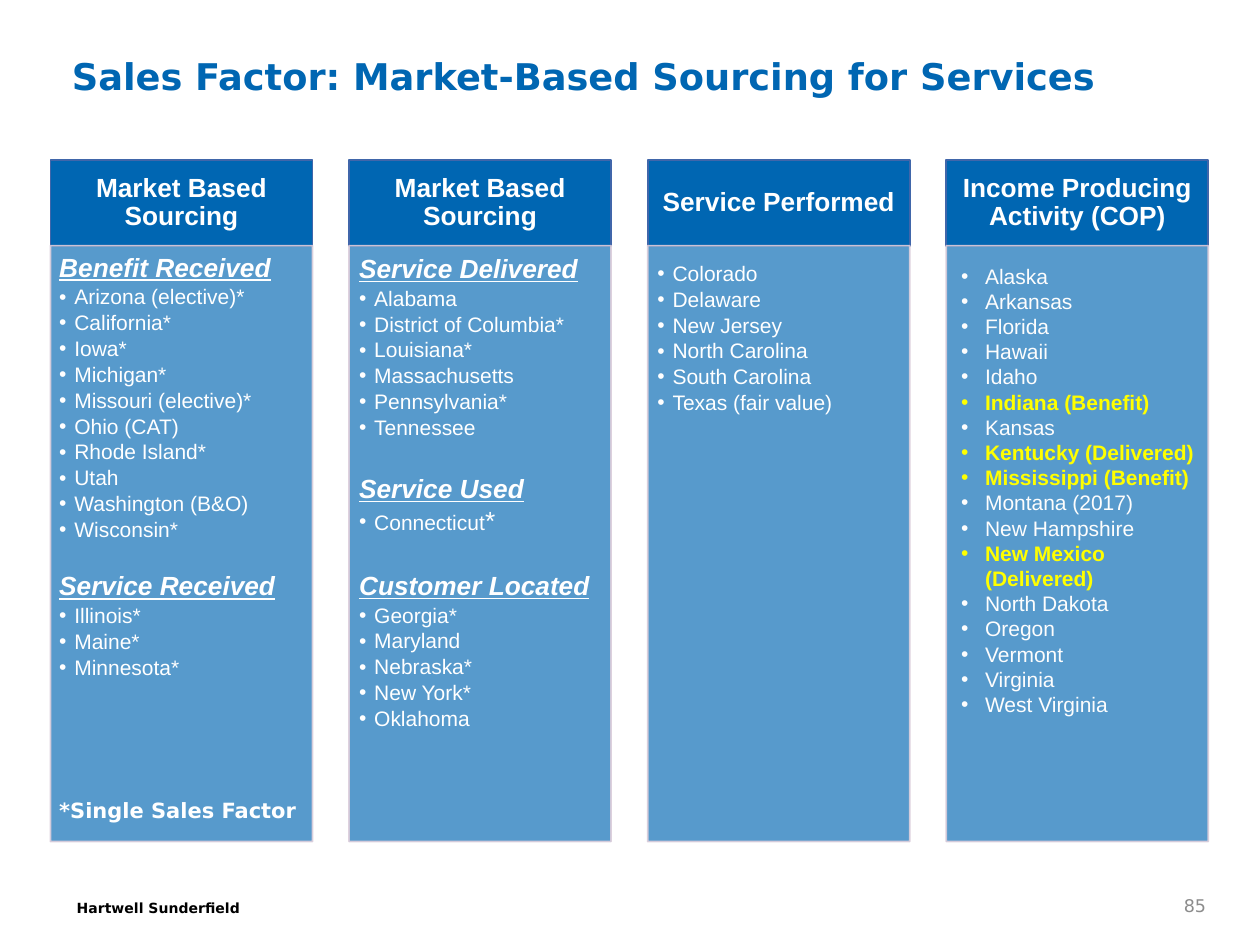
from lxml.etree import SubElement
from pptx import Presentation
from pptx.dml.color import RGBColor
from pptx.enum.shapes import MSO_SHAPE
from pptx.enum.text import MSO_ANCHOR, MSO_AUTO_SIZE, PP_ALIGN
from pptx.oxml.ns import qn
from pptx.util import Emu, Pt

TITLE = "Sales Factor: Market-Based Sourcing for Services"
HEADERS = ["Market Based Sourcing", "Market Based Sourcing",
           "Service Performed", "Income Producing Activity (COP)"]
BENEFIT_COLUMN = [
    ("Benefit Received", ["Arizona (elective)*", "California*", "Iowa*", "Michigan*",
                          "Missouri (elective)*", "Ohio (CAT)", "Rhode Island*", "Utah",
                          "Washington (B&O)", "Wisconsin*"]),
    ("Service Received", ["Illinois*", "Maine*", "Minnesota*"]),
]
DELIVERY_COLUMN = [
    ("Service Delivered", ["Alabama", "District of Columbia*", "Louisiana*",
                           "Massachusetts", "Pennsylvania*", "Tennessee"]),
    ("Service Used", ["Connecticut"]),
    ("Customer Located", ["Georgia*", "Maryland", "Nebraska*", "New York*", "Oklahoma"]),
]
PERFORMED_STATES = ["Colorado", "Delaware", "New Jersey", "North Carolina",
                    "South Carolina", "Texas (fair value)"]
ACTIVITY_STATES = ["Alaska", "Arkansas", "Florida", "Hawaii", "Idaho", "Indiana (Benefit)",
                   "Kansas", "Kentucky (Delivered)", "Mississippi (Benefit)",
                   "Montana (2017)", "New Hampshire", "New Mexico (Delivered)",
                   "North Dakota", "Oregon", "Vermont", "Virginia", "West Virginia"]
LARGE_SUFFIX = {"Connecticut": "*"}

PX = 9144
COLUMN_LEFT, COLUMN_PITCH, COLUMN_WIDTH = 40, 237, 208
HEADER_TOP, HEADER_HEIGHT, BODY_HEIGHT = 127, 68, 473
BODY_TOP = HEADER_TOP + HEADER_HEIGHT
BLUE, WHITE = "0066B2", "FFFFFF"


def px(*lengths):
    return [Emu(length * PX) for length in lengths]


def color(value):
    return RGBColor.from_string(value)


def set_font(font, size, value, name="Arial", bold=False):
    font.size, font.name, font.bold = Pt(size), name, bold
    font.color.rgb = color(value)


def set_frame(frame, insets, anchor=MSO_ANCHOR.TOP):
    frame.word_wrap = True
    frame.auto_size = MSO_AUTO_SIZE.NONE
    frame.vertical_anchor = anchor
    (frame.margin_left, frame.margin_top,
     frame.margin_right, frame.margin_bottom) = px(*insets)


def set_alpha(fill_format, percent):
    choice = fill_format.fore_color._xFill.find(qn("a:srgbClr"))
    SubElement(choice, qn("a:alpha"), val=str(percent * 1000))


def add_panel(slide, left, top, height, line_color, opacity=100, line_opacity=100):
    shape = slide.shapes.add_shape(MSO_SHAPE.RECTANGLE, *px(left, top, COLUMN_WIDTH, height))
    shape.shadow.inherit = False
    shape.fill.solid()
    shape.fill.fore_color.rgb = color(BLUE)
    shape.line.width = Pt(1)
    shape.line.color.rgb = color(line_color)
    if opacity < 100:
        set_alpha(shape.fill, opacity)
        set_alpha(shape.line.fill, line_opacity)
    return shape


def add_label(slide, box, text, size, value, bold=False, insets=(10, 5, 10, 5),
              anchor=MSO_ANCHOR.TOP, align=PP_ALIGN.LEFT):
    frame = slide.shapes.add_textbox(*px(*box)).text_frame
    set_frame(frame, insets, anchor)
    paragraph = frame.paragraphs[0]
    paragraph.text, paragraph.alignment = text, align
    set_font(paragraph.font, size, value, "DejaVu Sans", bold)


def next_paragraph(frame):
    first = frame.paragraphs[0]
    paragraph = frame.add_paragraph() if first.runs else first
    paragraph.alignment = PP_ALIGN.LEFT
    return paragraph


def add_bullet(frame, text, indent, value=WHITE, bold=False, spacing=None, after=0):
    paragraph = next_paragraph(frame)
    paragraph.add_run().text = text
    set_font(paragraph.font, 12, value, bold=bold)
    if text in LARGE_SUFFIX:
        suffix = paragraph.add_run()
        suffix.text, suffix.font.size = LARGE_SUFFIX[text], Pt(15)
    paragraph.line_spacing, paragraph.space_after = spacing, Pt(after)
    properties = paragraph._p.get_or_add_pPr()
    properties.set("marL", str(indent * PX))
    properties.set("indent", str(-indent * PX))
    SubElement(properties, qn("a:buFont"), typeface="Arial")
    SubElement(properties, qn("a:buChar"), char="•")


def add_groups(frame, groups, gap):
    for index, (heading, states) in enumerate(groups):
        paragraph = next_paragraph(frame)
        paragraph.add_run().text = heading
        set_font(paragraph.font, 15, WHITE, bold=True)
        paragraph.font.italic = paragraph.font.underline = True
        paragraph.line_spacing, paragraph.space_after = 0.9, Pt(2.25)
        paragraph.space_before = Pt(gap if index else 0)
        for state in states:
            add_bullet(frame, state, 12, spacing=0.9, after=1.8)


def add_columns(slide):
    bodies = []
    for index, header in enumerate(HEADERS):
        left = COLUMN_LEFT + index * COLUMN_PITCH
        frame = add_panel(slide, left, HEADER_TOP, HEADER_HEIGHT, "4066AA").text_frame
        set_frame(frame, (10, 6, 10, 6), MSO_ANCHOR.MIDDLE)
        paragraph = frame.paragraphs[0]
        paragraph.text, paragraph.alignment = header, PP_ALIGN.CENTER
        paragraph.line_spacing = 0.9
        set_font(paragraph.font, 15, WHITE, bold=True)
        bodies.append(add_panel(slide, left, BODY_TOP, BODY_HEIGHT, "DBCDDB", 66, 90))
    return bodies


def add_list_box(slide, box):
    frame = slide.shapes.add_textbox(*px(*box)).text_frame
    set_frame(frame, (10, 5, 10, 5))
    return frame


def main():
    presentation = Presentation()
    presentation.slide_width, presentation.slide_height = px(1000, 750)
    slide = presentation.slides.add_slide(presentation.slide_layouts[5])

    title = slide.shapes.title
    title.left, title.top, title.width, title.height = px(47, 44, 906, 36)
    set_frame(title.text_frame, (10, 5, 10, 5), MSO_ANCHOR.MIDDLE)
    paragraph = title.text_frame.paragraphs[0]
    paragraph.text, paragraph.alignment = TITLE, PP_ALIGN.LEFT
    paragraph.line_spacing = 0.9
    set_font(paragraph.font, 21, BLUE, "DejaVu Sans", True)

    bodies = add_columns(slide)
    set_frame(bodies[0].text_frame, (7, 7, 9, 10))
    add_groups(bodies[0].text_frame, BENEFIT_COLUMN, 16)
    set_frame(bodies[1].text_frame, (8, 8, 10, 11))
    add_groups(bodies[1].text_frame, DELIVERY_COLUMN, 18.8)

    performed = add_list_box(slide, (512, 204, 206, 134))
    for state in PERFORMED_STATES:
        add_bullet(performed, state, 12, spacing=0.9, after=1.8)
    activity = add_list_box(slide, (753, 204, 206, 374))
    for state in ACTIVITY_STATES:
        highlighted = state.endswith(("(Benefit)", "(Delivered)"))
        add_bullet(activity, state, 19, "FFFF00" if highlighted else "FDFDFD", highlighted)

    add_label(slide, (47, 633, 428, 20), "*Single Sales Factor", 12, WHITE, True,
              (0, 0, 0, 0), MSO_ANCHOR.BOTTOM)
    add_label(slide, (51, 709, 231, 24), "Hartwell Sunderfield", 8, "000000", True)
    add_label(slide, (880, 704, 87, 30), "85", 10, "8C8C8C",
              anchor=MSO_ANCHOR.MIDDLE, align=PP_ALIGN.RIGHT)
    presentation.save("out.pptx")


if __name__ == "__main__":
    main()
